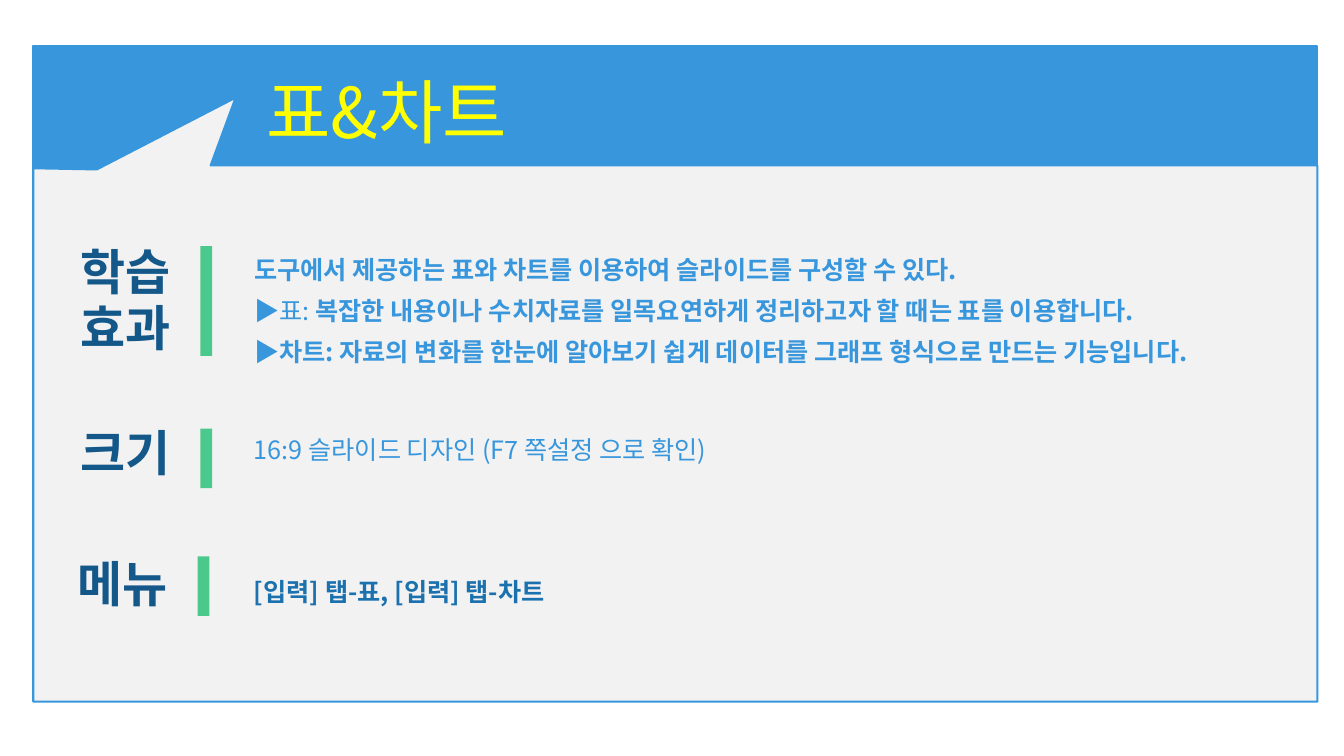
from dataclasses import dataclass

from lxml import etree
from pptx import Presentation
from pptx.dml.color import RGBColor
from pptx.enum.shapes import MSO_SHAPE
from pptx.enum.text import MSO_ANCHOR, MSO_AUTO_SIZE, PP_ALIGN
from pptx.oxml.ns import qn
from pptx.util import Cm, Pt

RECTANGLE = MSO_SHAPE.RECTANGLE
TOP, MIDDLE = MSO_ANCHOR.TOP, MSO_ANCHOR.MIDDLE
LEFT, CENTER = PP_ALIGN.LEFT, PP_ALIGN.CENTER
NO_AUTOFIT = MSO_AUTO_SIZE.NONE

FONT = "Noto Sans CJK KR"
COLORS = {
    "blue": "3796DC",
    "panel": "F2F2F2",
    "title": "FFFF00",
    "label": "14588A",
    "menu": "1B70AE",
    "bar": "4BC88C",
}
BAR_OFFSET = 3.86  # from a label's left edge to its bar
DETAIL_LEFT, DETAIL_WIDTH = 6.15, 25.43
# Panel outline with its speech tail, in hundredths of a centimetre
PANEL_POINTS = [(244, 427), (84, 424), (84, 1768), (3320, 1768),
                (3320, 417), (531, 417), (594, 246)]


@dataclass
class Box:
    left: float
    top: float
    width: float
    height: float


@dataclass
class TextRun:
    text: str
    bold: bool = True


@dataclass
class TextStyle:
    size: float
    color: str
    line_height: float
    alignment: PP_ALIGN = LEFT
    anchor: MSO_ANCHOR = TOP


@dataclass
class Section:
    label: str
    label_box: Box
    label_line_height: float
    bar_top: float
    bar_height: float
    detail_top: float
    detail_height: float
    detail_style: TextStyle
    detail: list[list[TextRun]]
    is_body: bool = False


SECTIONS = [
    Section("학습 효과", Box(1.19, 6.02, 3.94, 3.05), 40, 6.2, 2.77,
            6.02, 3.33, TextStyle(18, "blue", 29.2), [
                [TextRun("도구에서 제공하는 표와 차트를 이용하여 슬라이드를 구성할 수 있다.")],
                [TextRun("▶표: ", False),
                 TextRun("복잡한 내용이나 수치자료를 일목요연하게 정리하고자 할 때는 표를 이용합니다.")],
                [TextRun("▶", False),
                 TextRun("차트: 자료의 변화를 한눈에 알아보기 쉽게 데이터를 그래프 형식으로 만드는 기능입니다.")],
            ], is_body=True),
    Section("크기", Box(1.19, 10.67, 3.94, 1.57), 37.8, 10.8, 1.5,
            10.82, 1.02, TextStyle(18, "blue", 21.6),
            [[TextRun("16:9 슬라이드 디자인 (F7 쪽설정 으로 확인)", False)]]),
    Section("메뉴", Box(1.12, 13.97, 3.94, 1.55), 37.8, 14.02, 1.5,
            14.12, 1.3, TextStyle(18, "menu", 29.2),
            [[TextRun("[입력] 탭-표, [입력] 탭-차트")]]),
]


def color(name: str) -> RGBColor:
    return RGBColor.from_string(COLORS[name])


def place(shape, box: Box) -> None:
    shape.left, shape.top = Cm(box.left), Cm(box.top)
    shape.width, shape.height = Cm(box.width), Cm(box.height)


def paint(shape, fill: str, line: str | None = None) -> None:
    shape.shadow.inherit = False
    shape.fill.solid()
    shape.fill.fore_color.rgb = color(fill)
    if line:
        shape.line.color.rgb = color(line)
        shape.line.width = Pt(1.5)
    else:
        shape.line.fill.background()


def add_rectangle(slide, box: Box, fill: str, line: str | None = None):
    shape = slide.shapes.add_shape(RECTANGLE, Cm(box.left), Cm(box.top),
                                   Cm(box.width), Cm(box.height))
    paint(shape, fill, line)
    return shape


def add_text_box(slide, box: Box):
    return slide.shapes.add_textbox(Cm(box.left), Cm(box.top),
                                    Cm(box.width), Cm(box.height))


def remove_bullet(paragraph) -> None:
    properties = paragraph._p.get_or_add_pPr()
    properties.set("marL", "0")
    properties.set("indent", "0")
    etree.SubElement(properties, qn("a:buNone"))


def write(shape, lines: list[list[TextRun]], style: TextStyle) -> None:
    frame = shape.text_frame
    frame.word_wrap = True
    frame.auto_size = NO_AUTOFIT
    frame.vertical_anchor = style.anchor
    for index, line in enumerate(lines):
        paragraph = frame.add_paragraph() if index else frame.paragraphs[0]
        paragraph.alignment = style.alignment
        paragraph.line_spacing = Pt(style.line_height)
        paragraph.space_before = Pt(0)
        remove_bullet(paragraph)
        for part in line:
            run = paragraph.add_run()
            run.text = part.text
            run.font.size = Pt(style.size)
            run.font.bold = part.bold
            run.font.color.rgb = color(style.color)
            run.font.name = FONT
            # Hangul takes the East Asian typeface
            east_asian = etree.SubElement(run._r.get_or_add_rPr(), qn("a:ea"))
            east_asian.set("typeface", FONT)


def add_frame(slide) -> None:
    banner = add_rectangle(slide, Box(0.84, 1.17, 32.36, 4.8), "blue", "blue")
    builder = slide.shapes.build_freeform(*PANEL_POINTS[0], scale=Cm(0.01))
    builder.add_line_segments(PANEL_POINTS[1:], close=True)
    panel = builder.convert_to_shape()
    paint(panel, "panel", "blue")
    # Keep the frame behind the placeholders
    for shape in (panel, banner):
        slide.shapes.element.insert(2, shape.element)


def add_title(slide) -> None:
    title = slide.shapes.title
    place(title, Box(6.45, 1.6, 10.44, 2.36))
    title.line.color.rgb = color("blue")
    title.line.width = Pt(0.75)
    write(title, [[TextRun("표&차트", False)]],
          TextStyle(50, "title", 60, anchor=MIDDLE))


def add_section(slide, section: Section) -> None:
    label = add_text_box(slide, section.label_box)
    write(label, [[TextRun(section.label)]],
          TextStyle(35, "label", section.label_line_height, CENTER))

    detail_box = Box(DETAIL_LEFT, section.detail_top, DETAIL_WIDTH, section.detail_height)
    if section.is_body:
        detail = slide.placeholders[1]
        place(detail, detail_box)
    else:
        detail = add_text_box(slide, detail_box)
    write(detail, section.detail, section.detail_style)

    bar_left = section.label_box.left + BAR_OFFSET
    add_rectangle(slide, Box(bar_left, section.bar_top, 0.3, section.bar_height), "bar")


def main() -> None:
    presentation = Presentation()
    presentation.slide_width, presentation.slide_height = Cm(33.87), Cm(19.05)
    slide = presentation.slides.add_slide(presentation.slide_layouts[1])
    add_frame(slide)
    add_title(slide)
    for section in SECTIONS:
        add_section(slide, section)
    presentation.save("out.pptx")


if __name__ == "__main__":
    main()
